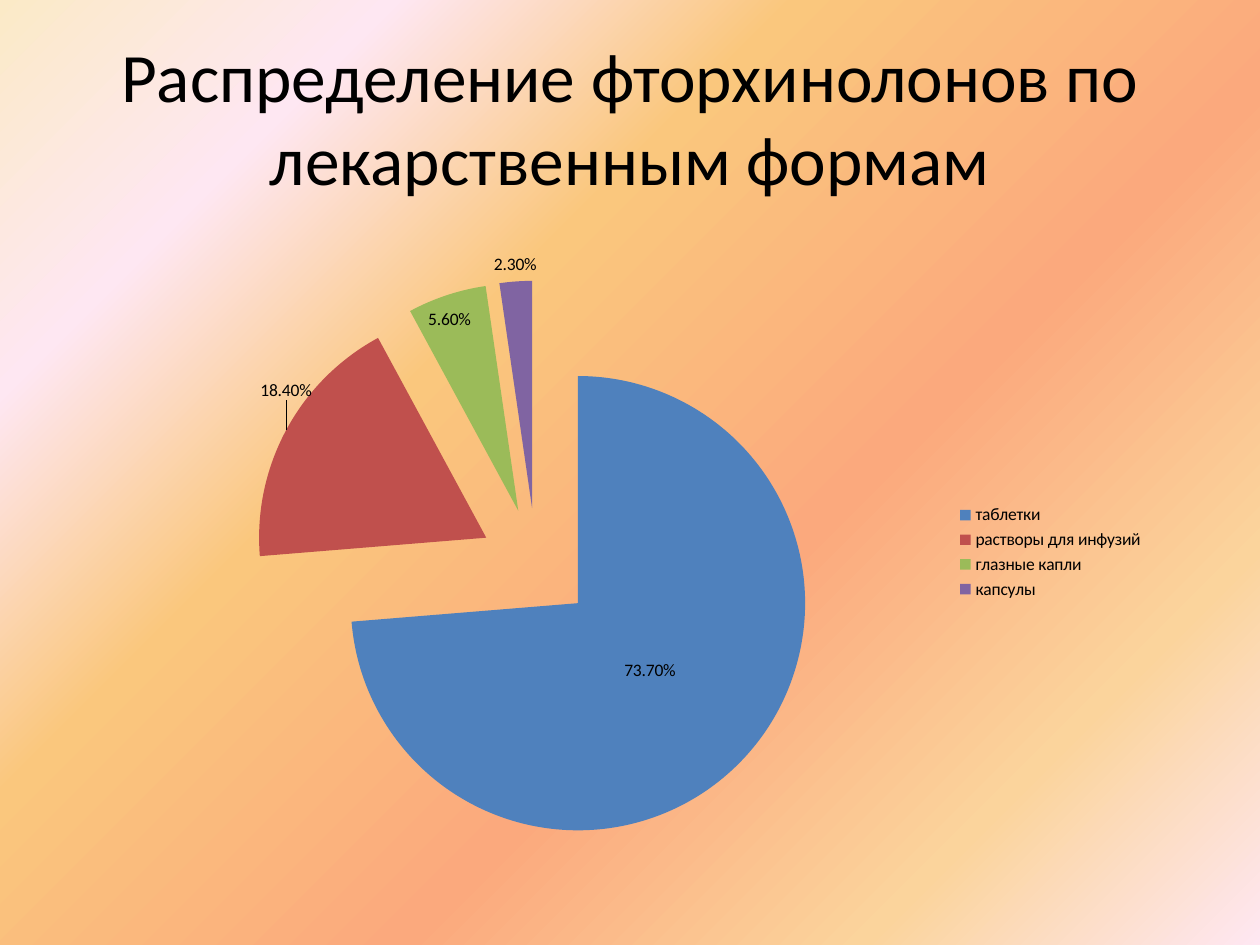
import pptx
import pptx.chart.data
import pptx.dml.color
import pptx.enum.chart
import pptx.enum.text
import pptx.oxml.ns
import pptx.util
import lxml.etree

Pt = pptx.util.Pt
RGBColor = pptx.dml.color.RGBColor
qn = pptx.oxml.ns.qn

BLACK = RGBColor(0x00, 0x00, 0x00)
BLUE = RGBColor(0x4F, 0x81, 0xBD)
RED = RGBColor(0xC0, 0x50, 0x4D)
GREEN = RGBColor(0x9B, 0xBB, 0x59)
PURPLE = RGBColor(0x80, 0x64, 0xA2)
CREAM = RGBColor(0xFB, 0xEA, 0xC7)
PINK = RGBColor(0xFE, 0xE7, 0xF2)
AMBER = RGBColor(0xFA, 0xC7, 0x7D)
CORAL = RGBColor(0xFB, 0xA9, 0x7D)
SAND = RGBColor(0xFB, 0xD4, 0x9C)

BACKDROP = [(0, CREAM), (18, PINK), (36, AMBER), (61, CORAL), (82, SAND), (100, PINK)]
FORMS = [
    ("таблетки", 0.737, BLUE),
    ("растворы для инфузий", 0.184, RED),
    ("глазные капли", 0.056, GREEN),
    ("капсулы", 0.023, PURPLE),
]
LABEL_SHIFTS = {0: {"x": -0.12, "y": -0.16}, 1: {"x": 0.03, "y": -0.04}}
PLOT_AREA = {"layoutTarget": "inner", "xMode": "edge", "yMode": "edge",
             "x": 0.14, "y": 0.07, "w": 0.54, "h": 0.9}


def style_font(font, size, color=BLACK, name="Calibri"):
    font.size, font.name = Pt(size), name
    font.color.rgb = color


def add_text(box, text, size, align, anchor):
    frame = box.text_frame
    frame.word_wrap = True
    frame.vertical_anchor = anchor
    para = frame.paragraphs[0]
    para.alignment = align
    span = para.add_run()
    span.text = text
    style_font(span.font, size)


def make_layout(values):
    layout = lxml.etree.Element(qn("c:layout"))
    manual = lxml.etree.SubElement(layout, qn("c:manualLayout"))
    for tag, value in values.items():
        lxml.etree.SubElement(manual, qn("c:" + tag), val=str(value))
    return layout


class SlideBuilder:
    """Holds the text style and the current slide."""

    def __init__(self, page, chart_size=10, title_size=39.6):
        self.page = page
        self.chart_size = chart_size
        self.title_size = title_size

    def background(self, stops):
        fill = self.page.background.fill
        fill.gradient()
        fill.gradient_angle = 315
        stop_list = self.page.element.find(".//" + qn("a:gsLst"))
        for old_stop in list(stop_list):
            stop_list.remove(old_stop)
        for percent, color in stops:
            stop = lxml.etree.SubElement(stop_list, qn("a:gs"), pos=str(percent * 1000))
            lxml.etree.SubElement(stop, qn("a:srgbClr"), val=str(color))

    def title(self, text, left, top, width, height):
        box = self.page.shapes.add_textbox(Pt(left), Pt(top), Pt(width), Pt(height))
        add_text(box, text, size=self.title_size,
                 align=pptx.enum.text.PP_ALIGN.CENTER,
                 anchor=pptx.enum.text.MSO_ANCHOR.MIDDLE)

    def pie(self, slices, left, top, width, height, explosion, shifts):
        names, values, colors = zip(*slices)
        data = pptx.chart.data.CategoryChartData(number_format="0.00%")
        data.categories = names
        data.add_series("Series 1", values)
        chart = self.page.shapes.add_chart(
            pptx.enum.chart.XL_CHART_TYPE.PIE,
            Pt(left), Pt(top), Pt(width), Pt(height), data).chart
        chart.has_title = False
        style_font(chart.font, self.chart_size)
        chart.has_legend = True
        chart.legend.position = pptx.enum.chart.XL_LEGEND_POSITION.RIGHT
        chart.legend.include_in_layout = False

        plot = chart.plots[0]
        plot.vary_by_categories = True
        plot_area = chart.element.find(".//" + qn("c:plotArea"))
        for old_layout in plot_area.findall(qn("c:layout")):
            plot_area.remove(old_layout)
        plot_area.insert(0, make_layout(PLOT_AREA))

        series = plot.series[0]
        exploded = lxml.etree.Element(qn("c:explosion"), val=str(explosion))
        plot_area.find(".//" + qn("c:ser")).find(qn("c:tx")).addnext(exploded)
        for index, color in enumerate(colors):
            fill = series.points[index].format.fill
            fill.solid()
            fill.fore_color.rgb = color
        self.pie_labels(series, shifts)
        for entry in plot_area.iter(qn("c:dLbl")):
            number = entry.find(qn("c:idx"))
            number.addnext(make_layout(shifts[int(number.get("val"))]))

    def pie_labels(self, series, shifts):
        best_fit = pptx.enum.chart.XL_LABEL_POSITION.BEST_FIT
        labels = series.data_labels
        labels.show_value = True
        labels.number_format = "0.00%"
        labels.number_format_is_linked = False
        labels.position = best_fit
        style_font(labels.font, self.chart_size)
        for index in shifts:
            label = series.points[index].data_label
            label.position = best_fit
            style_font(label.font, self.chart_size)


def main():
    deck = pptx.Presentation()
    deck.slide_width, deck.slide_height = Pt(720), Pt(540)
    builder = SlideBuilder(deck.slides.add_slide(deck.slide_layouts[6]))
    builder.background(BACKDROP)
    builder.title("Распределение фторхинолонов по лекарственным формам",
                  left=36, top=21.6, width=648, height=90)
    builder.pie(FORMS, left=60, top=134, width=601, height=363,
                explosion=25, shifts=LABEL_SHIFTS)
    deck.save("out.pptx")


if __name__ == "__main__":
    main()
